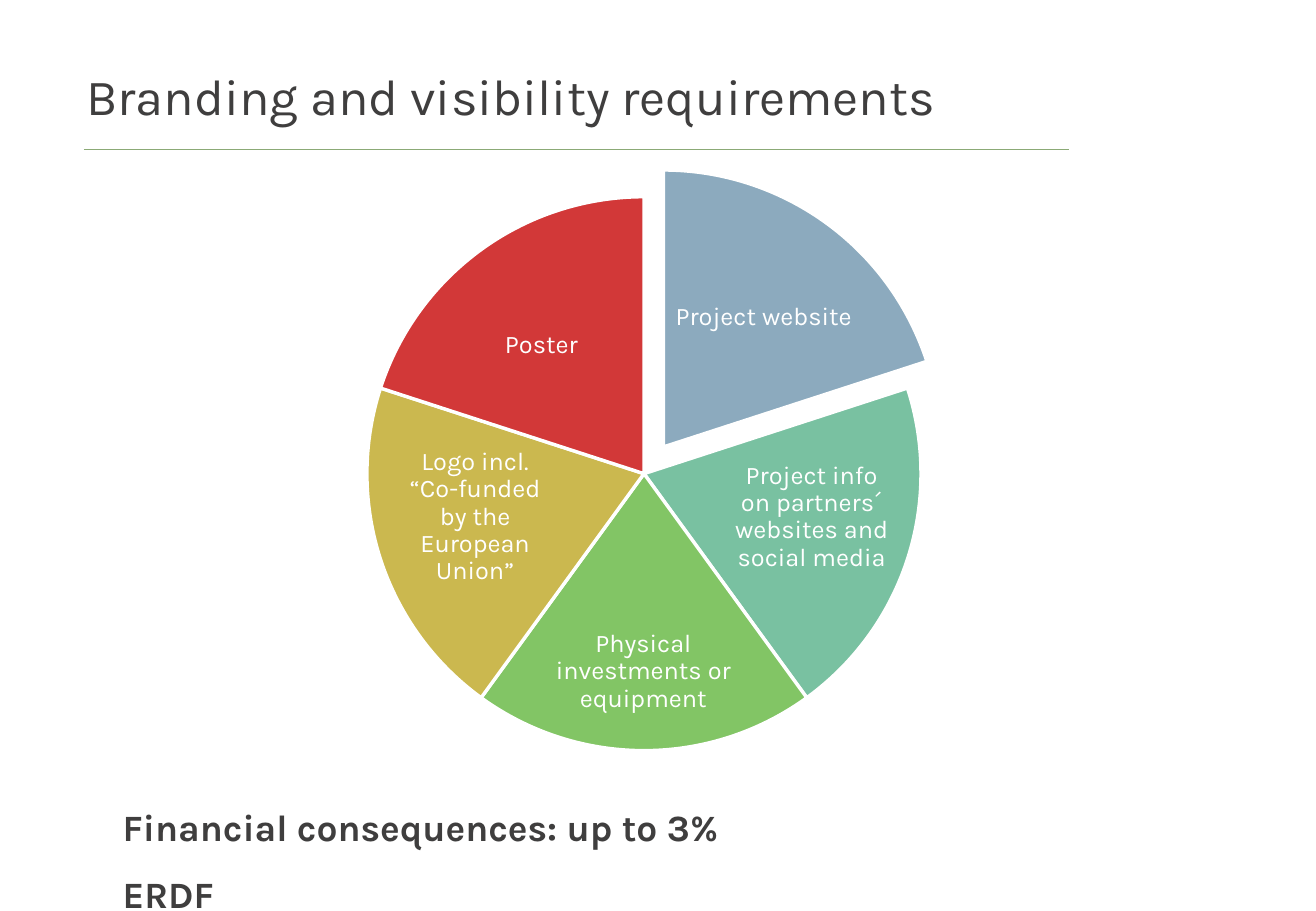
from pptx import Presentation
from pptx.dml.color import RGBColor
from pptx.enum.shapes import MSO_CONNECTOR, MSO_SHAPE
from pptx.enum.text import MSO_ANCHOR, PP_ALIGN
from pptx.oxml.ns import qn
from pptx.util import Inches, Pt

PIE = MSO_SHAPE.PIE
STRAIGHT = MSO_CONNECTOR.STRAIGHT
TOP, MIDDLE, BOTTOM = MSO_ANCHOR.TOP, MSO_ANCHOR.MIDDLE, MSO_ANCHOR.BOTTOM
LEFT, CENTER = PP_ALIGN.LEFT, PP_ALIGN.CENTER
FONT, DARK, WHITE = "Karla", "3F3E3E", "FFFFFF"


def color(hex_string):
    return RGBColor.from_string(hex_string)


def add_text(shapes, text, box, size, font_color=DARK, bold=False, align=LEFT,
             anchor=TOP, spacing=1.0, margins=(0.1, 0.05, 0.1, 0.05)):
    text_box = shapes.add_textbox(*[Inches(length) for length in box])
    frame = text_box.text_frame
    frame.word_wrap = True
    frame.vertical_anchor = anchor
    (frame.margin_left, frame.margin_top,
     frame.margin_right, frame.margin_bottom) = [Inches(m) for m in margins]
    paragraph = frame.paragraphs[0]
    paragraph.text = text
    paragraph.alignment = align
    paragraph.line_spacing = spacing
    font = paragraph.runs[0].font
    font.name, font.size, font.bold = FONT, Pt(size), bold
    font.color.rgb = color(font_color)


presentation = Presentation()
presentation.slide_width = Inches(10.83)
presentation.slide_height = Inches(7.5)
slide = presentation.slides.add_slide(presentation.slide_layouts[6])

# Title and rule
rule = slide.shapes.add_connector(
    STRAIGHT, Inches(0.69), Inches(1.23), Inches(8.8), Inches(1.23))
rule.line.color.rgb = color("8BAA76")
rule.line.width = Pt(0.5)
properties = rule._element.spPr
properties.append(properties.makeelement(qn("a:effectLst"), {}))
add_text(slide.shapes, "Branding and visibility requirements",
         (0.61, 0.13, 7.62, 0.95), 30, anchor=BOTTOM)

# Five equal slices, clockwise from the top; the first is pulled out
PIE_LEFT, PIE_TOP, DIAMETER = 3.02, 1.62, 4.56
PULL_X, PULL_Y = 0.16, -0.22
slices = [
    ("Project website", "8CAABE", (5.51, 2.08, 1.55, 1.06)),
    ("Project info on partners´ websites and social media", "79C1A1",
     (6.0, 3.68, 1.36, 1.15)),
    ("Physical investments or equipment", "82C565", (4.48, 5.04, 1.63, 0.98)),
    ("Logo incl. “Co-funded by the European Union”", "CBB84F",
     (3.23, 3.68, 1.36, 1.15)),
    ("Poster", "D23838", (3.68, 2.31, 1.55, 1.06)),
]
sweep = 360 / len(slices)
degree = 0.6  # one degree in adjustment units
wheel = slide.shapes.add_group_shape()
for index, (label, fill, label_box) in enumerate(slices):
    pulled = index == 0
    wedge = wheel.shapes.add_shape(
        PIE, Inches(PIE_LEFT + PULL_X * pulled), Inches(PIE_TOP + PULL_Y * pulled),
        Inches(DIAMETER), Inches(DIAMETER))
    start = 270 + index * sweep
    wedge.adjustments[0] = start % 360 * degree
    wedge.adjustments[1] = (start + sweep) % 360 * degree
    wedge.shadow.inherit = False
    wedge.fill.solid()
    wedge.fill.fore_color.rgb = color(fill)
    wedge.line.color.rgb = color(WHITE)
    wedge.line.width = Pt(2)
    add_text(wheel.shapes, label, label_box, 15, font_color=WHITE, align=CENTER,
             anchor=MIDDLE, spacing=0.9, margins=(0.02,) * 4)

# Consequences
add_text(slide.shapes, "Financial consequences: up to 3% ERDF",
         (0.85, 6.39, 5.96, 0.59), 22, bold=True, spacing=1.5,
         margins=(0.16, 0.05, 0.1, 0.05))

presentation.save("out.pptx")
